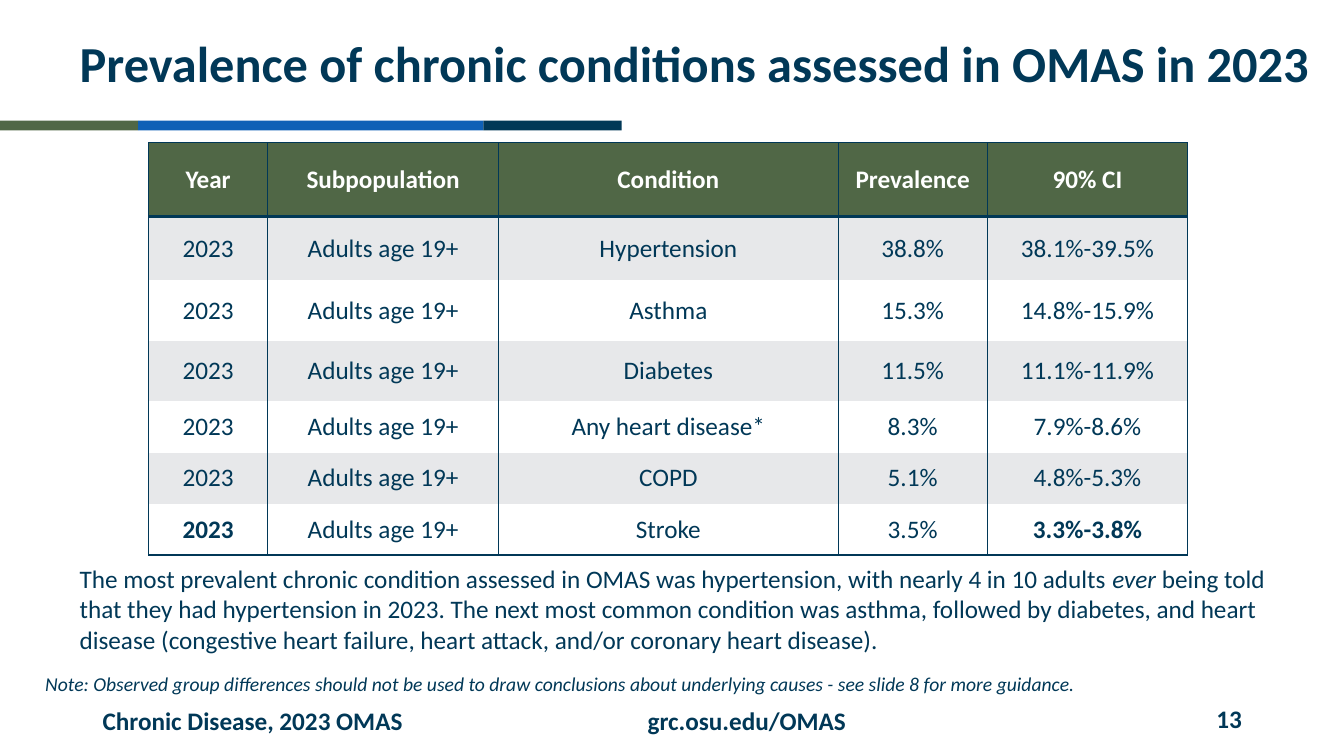
from collections import namedtuple
from dataclasses import dataclass

from lxml import etree
from pptx import Presentation
from pptx.dml.color import RGBColor
from pptx.enum.shapes import MSO_SHAPE
from pptx.enum.text import MSO_ANCHOR, MSO_AUTO_SIZE, PP_ALIGN
from pptx.oxml.ns import qn
from pptx.util import Pt

RECTANGLE = MSO_SHAPE.RECTANGLE
TOP, MIDDLE = MSO_ANCHOR.TOP, MSO_ANCHOR.MIDDLE
LEFT, CENTER, RIGHT = PP_ALIGN.LEFT, PP_ALIGN.CENTER, PP_ALIGN.RIGHT
NO_AUTOFIT = MSO_AUTO_SIZE.NONE

Box = namedtuple("Box", "left top width height")


@dataclass(frozen=True)
class Theme:
    font: str = "Calibri"
    navy: str = "013857"
    blue: str = "0F60B6"
    green: str = "506746"
    gray: str = "E7E8EA"
    white: str = "FFFFFF"
    title_size: int = 36
    text_size: int = 18
    note_size: int = 14
    thin: int = 1
    thick: int = 2


THEME = Theme()

HEADERS = ["Year", "Subpopulation", "Condition", "Prevalence", "90% CI"]
CONDITIONS = [
    ("Hypertension", "38.8%", "38.1%-39.5%"),
    ("Asthma", "15.3%", "14.8%-15.9%"),
    ("Diabetes", "11.5%", "11.1%-11.9%"),
    ("Any heart disease*", "8.3%", "7.9%-8.6%"),
    ("COPD", "5.1%", "4.8%-5.3%"),
    ("Stroke", "3.5%", "3.3%-3.8%"),
]
ROWS = [HEADERS] + [["2023", "Adults age 19+", *row] for row in CONDITIONS]
COLUMN_WIDTHS = [85, 165, 242.5, 106.5, 143.3]
ROW_HEIGHTS = [52.8, 45.4, 43.2, 43.2, 36.7, 36.7, 36.7]
SUMMARY = [
    ("The most prevalent chronic condition assessed in OMAS was hypertension, "
     "with nearly 4 in 10 adults ", False),
    ("ever", True),
    (" being told that they had hypertension in 2023. The next most common condition "
     "was asthma, followed by diabetes, and heart disease (congestive heart failure, "
     "heart attack, and/or coronary heart disease).", False),
]
NOTE = ("Note: Observed group differences should not be used to draw conclusions about "
        "underlying causes - see slide 8 for more guidance.")


def style_para(para, size, color=THEME.navy, bold=False, italic=None, align=LEFT):
    para.alignment = align
    para.space_before = Pt(0)
    font = para.font
    font.name, font.size = THEME.font, Pt(size)
    font.bold, font.italic = bold, italic
    font.color.rgb = RGBColor.from_string(color)


def place(shape, box):
    shape.left, shape.top, shape.width, shape.height = map(Pt, box)


def prepare_frame(shape, anchor):
    frame = shape.text_frame
    frame.word_wrap = True
    frame.auto_size = NO_AUTOFIT
    frame.vertical_anchor = anchor
    return frame


def add_label(page, box, text, size, anchor=MIDDLE, **style):
    frame = prepare_frame(page.shapes.add_textbox(*map(Pt, box)), anchor)
    frame.text = text
    style_para(frame.paragraphs[0], size, **style)


def add_title(page, box, text):
    title = page.shapes.title
    place(title, box)
    frame = prepare_frame(title, MIDDLE)
    frame.text = text
    para = frame.paragraphs[0]
    para.line_spacing = 0.9
    style_para(para, THEME.title_size, bold=True)


def add_summary(page, box):
    body = page.placeholders[1]
    place(body, box)
    para = prepare_frame(body, TOP).paragraphs[0]
    properties = para._p.get_or_add_pPr()
    properties.set("marL", "0")
    properties.set("indent", "0")
    etree.SubElement(properties, qn("a:buNone"))
    style_para(para, THEME.text_size)
    for text, italic in SUMMARY:
        span = para.add_run()
        span.text = text
        if italic:
            span.font.italic = True


def add_stripe(page, box):
    left = box.left
    for share, color in ((2, THEME.green), (5, THEME.blue), (2, THEME.navy)):
        width = box.width * share / 9
        bar = page.shapes.add_shape(RECTANGLE, Pt(left), Pt(box.top), Pt(width), Pt(box.height))
        bar.shadow.inherit = False
        bar.fill.solid()
        bar.fill.fore_color.rgb = RGBColor.from_string(color)
        bar.line.fill.background()
        left += width


def set_borders(cell, widths):
    properties = cell._tc.get_or_add_tcPr()
    for side, width in zip("LRTB", widths):
        line = etree.SubElement(properties, qn(f"a:ln{side}"), w=str(int(Pt(width))))
        if width:
            fill = etree.SubElement(line, qn("a:solidFill"))
            etree.SubElement(fill, qn("a:srgbClr"), val=THEME.navy)
        else:
            etree.SubElement(line, qn("a:noFill"))


def add_conditions_table(page, box):
    table = page.shapes.add_table(len(ROWS), len(HEADERS), *map(Pt, box)).table
    table.horz_banding = False
    for column, width in zip(table.columns, COLUMN_WIDTHS):
        column.width = Pt(width)
    for row, height in zip(table.rows, ROW_HEIGHTS):
        row.height = Pt(height)
    last_row, last_column = len(ROWS) - 1, len(HEADERS) - 1
    rules = {0: THEME.thin, 1: THEME.thick, len(ROWS): THEME.thick}
    for r, texts in enumerate(ROWS):
        header = r == 0
        fill = THEME.green if header else THEME.gray if r % 2 else THEME.white
        for c, text in enumerate(texts):
            cell = table.cell(r, c)
            cell.text = text
            cell.vertical_anchor = MIDDLE
            set_borders(cell, (THEME.thin, THEME.thin, rules.get(r, 0), rules.get(r + 1, 0)))
            cell.fill.solid()
            cell.fill.fore_color.rgb = RGBColor.from_string(fill)
            style_para(cell.text_frame.paragraphs[0], THEME.text_size,
                       color=THEME.white if header else THEME.navy,
                       bold=header or (r == last_row and c in (0, last_column)),
                       align=CENTER)


def add_footer(page, box):
    size = THEME.text_size
    add_label(page, Box(box.left, box.top, 238, box.height),
              "Chronic Disease, 2023 OMAS", size, bold=True)
    add_label(page, Box(box.left + 305.3, box.top, 324, box.height),
              "grc.osu.edu/OMAS", size, bold=True, align=CENTER)
    add_label(page, Box(box.left + box.width - 216, box.top - 1.4, 216, box.height),
              "13", size, bold=True, align=RIGHT)


def main():
    deck = Presentation()
    deck.slide_width, deck.slide_height = Pt(960), Pt(540)
    page = deck.slides.add_slide(deck.slide_layouts[1])
    add_stripe(page, Box(0, 86.2, 444, 7))
    add_footer(page, Box(66.2, 500.4, 828, 28.8))
    add_summary(page, Box(49.7, 398.9, 864.7, 87.8))
    add_title(page, Box(49.7, 0.7, 910.3, 92.9), "Prevalence of chronic conditions assessed in OMAS in 2023")
    add_conditions_table(page, Box(106.2, 102, sum(COLUMN_WIDTHS), sum(ROW_HEIGHTS)))
    add_label(page, Box(25.2, 476.6, 913.7, 24.5), NOTE, THEME.note_size, TOP, italic=True)
    deck.save("out.pptx")


if __name__ == "__main__":
    main()
